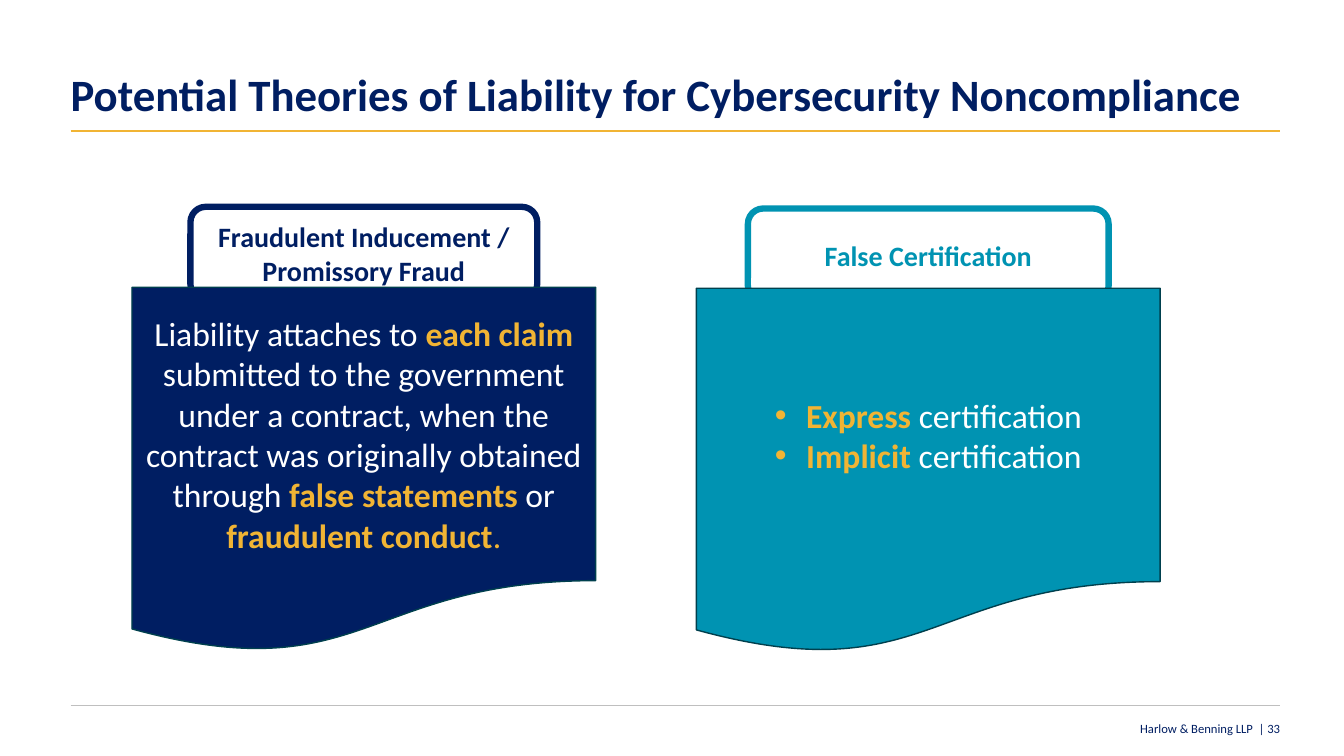
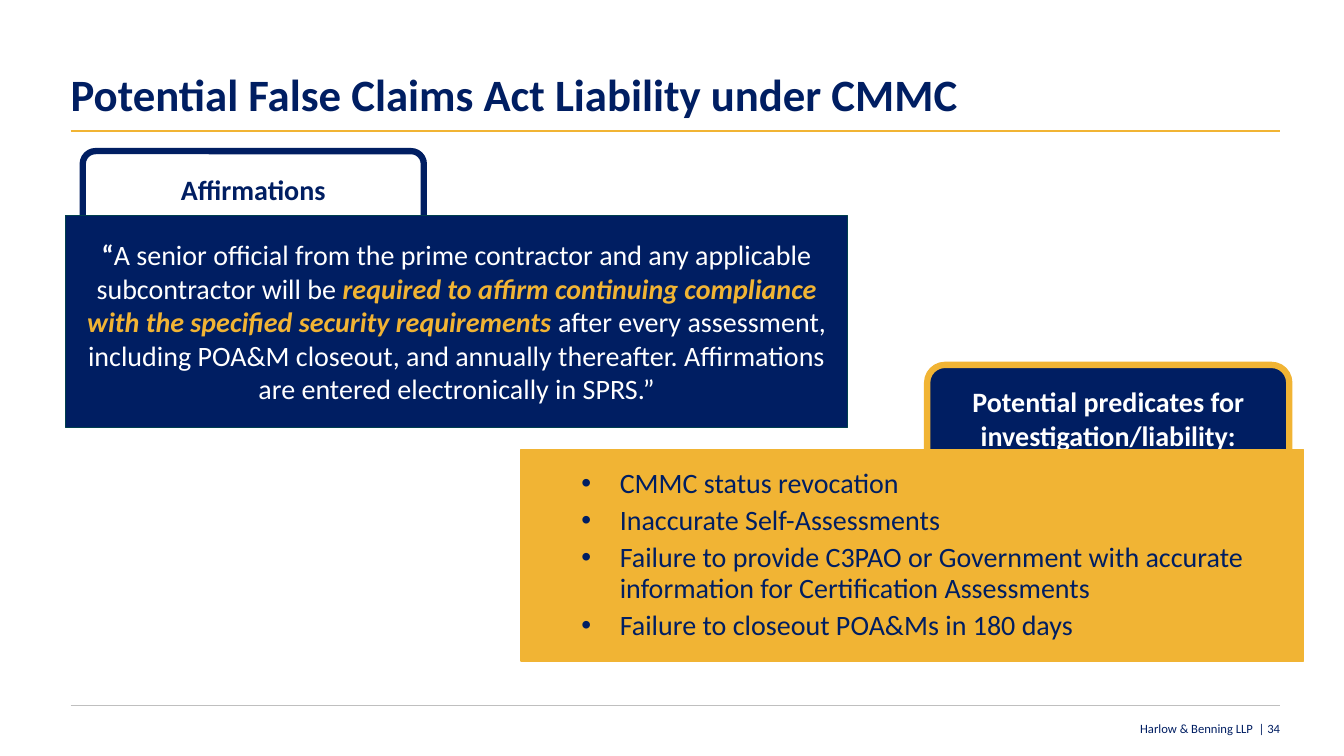
from lxml import etree
from pptx import Presentation
from pptx import util as u
from pptx.dml.color import RGBColor
from pptx.enum import shapes, text
from pptx.oxml.ns import qn

NAVY = RGBColor(0x00, 0x1E, 0x62)
TEAL = RGBColor(0x00, 0x93, 0xB2)
GOLD = RGBColor(0xF1, 0xB4, 0x34)
WHITE = RGBColor(0xFF, 0xFF, 0xFF)
GREY = RGBColor(0xBF, 0xBF, 0xBF)
EDGE = RGBColor(0x00, 0x40, 0x4E)

FONT = "Calibri"
FIRM = "Harlow & Benning LLP"
W, H = u.Inches(13.333), u.Inches(7.5)
SLIDE = (0, 0, W, H)
LEFT, WIDTH = 5.25, 90
SHAPE = shapes.MSO_SHAPE
ALIGN = text.PP_ALIGN
ANCHOR = text.MSO_ANCHOR

TITLE = dict(size=u.Pt(32), bold=True, color=NAVY)
FOOTER = dict(size=u.Pt(9), color=NAVY)
STRONG = dict(bold=True, color=GOLD)
STRESS = dict(STRONG, italic=True)


def part(box, x, y, w, h):
    bx, by, bw, bh = box
    return tuple(int(v) for v in (bx + bw * x / 100, by + bh * y / 100,
                                  bw * w / 100, bh * h / 100))


def place(sp, box):
    for name, value in zip(("left", "top", "width", "height"), box):
        setattr(sp, name, value)


def add_bullet(p, margin, hang):
    pPr = p._p.get_or_add_pPr()
    pPr.set("marL", str(u.Inches(margin)))
    pPr.set("indent", str(-u.Inches(hang)))
    etree.SubElement(pPr, qn("a:buFont")).set("typeface", "Arial")
    etree.SubElement(pPr, qn("a:buChar")).set("char", "•")


def write(sp, paragraphs, font, align=ALIGN.CENTER, anchor=ANCHOR.MIDDLE,
          inset=None, bullet=None, spacing=None, before=None):
    tf = sp.text_frame
    frame = dict(word_wrap=True, vertical_anchor=anchor,
                 auto_size=text.MSO_AUTO_SIZE.NONE)
    if inset is not None:
        frame.update({f"margin_{side}": inset
                      for side in ("left", "top", "right", "bottom")})
    for name, value in frame.items():
        setattr(tf, name, value)
    for i, runs in enumerate(paragraphs):
        p = tf.paragraphs[0] if i == 0 else tf.add_paragraph()
        if bullet:
            add_bullet(p, *bullet)
        fmt = dict(alignment=align, line_spacing=spacing,
                   space_before=before if i else None)
        for name, value in fmt.items():
            if value is not None:
                setattr(p, name, value)
        for words, change in runs:
            r = p.add_run()
            r.text = words
            for name, value in {"name": FONT, "bold": False, **font, **change}.items():
                if name == "color":
                    r.font.color.rgb = value
                else:
                    setattr(r.font, name, value)


def add_rule(s, y, color, weight):
    x, y, w, _ = part(SLIDE, LEFT, y, WIDTH, 0)
    ln = s.shapes.add_connector(shapes.MSO_CONNECTOR.STRAIGHT, x, y, x + w, y)
    ln.line.color.rgb = color
    ln.line.width = u.Pt(weight)
    etree.SubElement(ln._element.spPr, qn("a:effectLst"))


def add_panel(s, kind, box, fill, line, weight):
    sp = s.shapes.add_shape(kind, *box)
    sp.shadow.inherit = False
    if fill is None:
        sp.fill.background()
    else:
        sp.fill.solid()
        sp.fill.fore_color.rgb = fill
    sp.line.color.rgb = line
    sp.line.width = u.Pt(weight)
    return sp


def add_card(s, box, tab, label, body, kind, fill, edge=EDGE,
             tab_fill=None, ink=WHITE, size=20, **layout):
    sp = add_panel(s, SHAPE.ROUNDED_RECTANGLE, part(box, *tab), tab_fill, fill, 4.5)
    write(sp, [[(label, {})]],
          dict(size=u.Pt(20), bold=True, color=WHITE if tab_fill else fill))
    sp = add_panel(s, kind, box, fill, edge, 1)
    write(sp, body, dict(size=u.Pt(size), color=ink), **layout)


def add_page(prs, title, number):
    s = prs.slides.add_slide(prs.slide_layouts[5])
    place(s.shapes.title, part(SLIDE, LEFT, 9.33, WIDTH, 6.67))
    write(s.shapes.title, [[(title, {})]], TITLE, ALIGN.LEFT, ANCHOR.BOTTOM,
          inset=0, spacing=0.9)
    add_rule(s, 93.33, GREY, 0.25)
    add_rule(s, 17.33, GOLD, 1.5)
    sp = s.shapes.add_textbox(*part(SLIDE, 84, 95.33, 11.25, 2))
    write(sp, [[(f"{FIRM}  | {number}", {})]], FOOTER, ALIGN.RIGHT, inset=0)
    return s


def add_theories(prs):
    s = add_page(prs, "Potential Theories of Liability for Cybersecurity Noncompliance", 33)
    add_card(s, part(SLIDE, 9.82, 38, 34.5, 48.4), (12.6, -22, 74.8, 25.3),
             "Fraudulent Inducement / Promissory Fraud",
             [[("Liability attaches to ", {}), ("each claim", STRONG),
               (" submitted to the government under a contract, when the contract "
                "was originally obtained through ", {}),
               ("false statements", STRONG), (" or ", {}),
               ("fraudulent conduct", STRONG), (".", dict(color=GOLD))]],
             SHAPE.FLOWCHART_DOCUMENT, NAVY, size=24)
    add_card(s, part(SLIDE, 51.82, 38.13, 34.5, 48.4), (11.1, -21.8, 77.8, 25.3),
             "False Certification",
             [[(word, STRONG), (" certification", {})] for word in ("Express", "Implicit")],
             SHAPE.FLOWCHART_DOCUMENT, TEAL, size=24, bullet=(0.31, 0.31))


def add_cmmc(prs):
    s = add_page(prs, "Potential False Claims Act Liability under CMMC", 34)
    add_card(s, part(SLIDE, 4.88, 28.53, 58.2, 28), (2.2, -30.5, 43.6, 36.2),
             "Affirmations",
             [[("“", dict(bold=True)),
               ("A senior official from the prime contractor and any applicable "
                "subcontractor will be ", {}),
               ("required to affirm continuing compliance with the specified "
                "security requirements ", STRESS),
               ("after every assessment, including POA&M closeout, and annually "
                "thereafter. Affirmations are entered electronically in SPRS.”", {})]],
             SHAPE.RECTANGLE, NAVY)
    predicates = ("CMMC status revocation",
                  "Inaccurate Self-Assessments",
                  "Failure to provide C3PAO or Government with accurate "
                  "information for Certification Assessments",
                  "Failure to closeout POA&Ms in 180 days")
    add_card(s, part(SLIDE, 38.78, 59.47, 58.2, 28), (51.9, -40, 46.3, 50.5),
             "Potential predicates for investigation/liability:",
             [[(item, {})] for item in predicates],
             SHAPE.RECTANGLE, GOLD, edge=GOLD, tab_fill=NAVY, ink=NAVY,
             align=ALIGN.LEFT, bullet=(0.88, 0.38), spacing=0.9, before=u.Pt(5))


def main():
    prs = Presentation()
    prs.slide_width, prs.slide_height = W, H
    add_theories(prs)
    add_cmmc(prs)
    prs.save("out.pptx")


if __name__ == "__main__":
    main()
